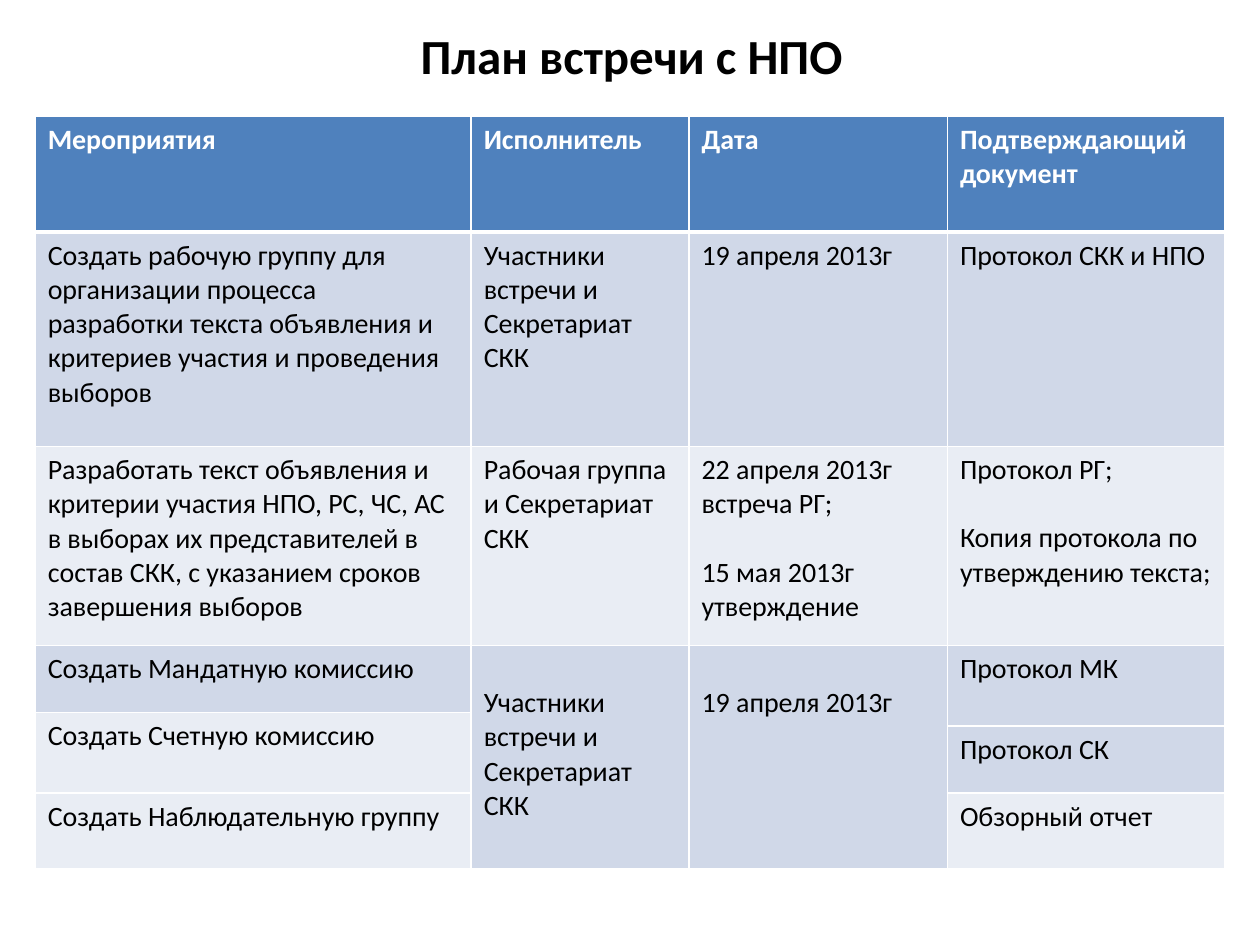
"""Build the meeting plan slide: a title and a table with merged cells."""
from dataclasses import dataclass

from lxml import etree
from pptx import Presentation
from pptx.dml.color import RGBColor
from pptx.enum.text import MSO_ANCHOR, PP_ALIGN
from pptx.oxml.ns import qn
from pptx.util import Cm, Pt

CENTER, LEFT = PP_ALIGN.CENTER, PP_ALIGN.LEFT
MIDDLE = MSO_ANCHOR.MIDDLE
BLANK_LAYOUT = 6
FONT = "Calibri"
COLORS = {"white": "FFFFFF", "black": "000000", "header": "4F81BD",
          "dark": "D0D8E8", "light": "E9EDF4"}
COLUMN_WIDTHS = (8.79, 4.39, 5.21, 5.59)
ROW_HEIGHTS = (2.34, 4.32, 4.01, 1.35, 0.28, 1.35, 1.52)
LINE_GAP = Pt(19.5)
CELL_MARGIN = Cm(0.13)


@dataclass(frozen=True)
class Entry:
    """One filled table cell, which may span several rows."""
    row: int
    column: int
    lines: tuple[str, ...]
    fill: str
    row_span: int = 1
    lowered: bool = False


HEADERS = ("Мероприятия", "Исполнитель", "Дата", "Подтверждающий документ")
FIRST_STEP = (
    "Создать рабочую группу для организации процесса разработки текста "
    "объявления и критериев участия и проведения выборов",
    "Участники встречи и Секретариат СКК", "19 апреля 2013г", "Протокол СКК и НПО")
ENTRIES = (
    *(Entry(0, column, (text,), "header") for column, text in enumerate(HEADERS)),
    *(Entry(1, column, (text,), "dark") for column, text in enumerate(FIRST_STEP)),
    Entry(2, 0, ("Разработать текст объявления и критерии участия НПО, РС, ЧС, АС "
                 "в выборах их представителей в состав СКК, с указанием сроков "
                 "завершения выборов",), "light"),
    Entry(2, 1, ("Рабочая группа и Секретариат СКК",), "light"),
    Entry(2, 2, ("22 апреля 2013г встреча РГ;", "15 мая 2013г утверждение"), "light"),
    Entry(2, 3, ("Протокол РГ;", "Копия протокола по утверждению текста;"), "light"),
    Entry(3, 0, ("Создать Мандатную комиссию",), "dark"),
    Entry(3, 1, ("Участники встречи и Секретариат СКК",), "dark", 4, True),
    Entry(3, 2, ("19 апреля 2013г",), "dark", 4, True),
    Entry(3, 3, ("Протокол МК",), "dark", 2),
    Entry(4, 0, ("Создать Счетную комиссию",), "light", 2),
    Entry(5, 3, ("Протокол СК",), "dark"),
    Entry(6, 0, ("Создать Наблюдательную группу",), "light"),
    Entry(6, 3, ("Обзорный отчет",), "light"),
)


def write(frame, lines: tuple[str, ...], *, size: int, color: str,
          bold: bool = False, align=LEFT) -> None:
    """Write paragraphs, set one line apart, into a text frame."""
    frame.word_wrap = True
    for index, line in enumerate(lines):
        para = frame.add_paragraph() if index else frame.paragraphs[0]
        para.alignment = align
        if index:
            para.space_before = LINE_GAP
        span = para.add_run()
        span.text = line
        span.font.name = FONT
        span.font.size = Pt(size)
        span.font.bold = bold
        span.font.color.rgb = RGBColor.from_string(COLORS[color])


def draw_borders(cell, row: int) -> None:
    """Outline a cell in white, with a thick line under the header."""
    thick_side = {0: "lnB", 1: "lnT"}.get(row)
    properties = cell._tc.get_or_add_tcPr()
    for side in ("lnL", "lnR", "lnT", "lnB"):
        width = Pt(3 if side == thick_side else 1)
        line = etree.SubElement(properties, qn(f"a:{side}"), w=str(width))
        fill = etree.SubElement(line, qn("a:solidFill"))
        etree.SubElement(fill, qn("a:srgbClr"), val=COLORS["white"])


def draw_entry(table, entry: Entry) -> None:
    """Fill, merge and write one entry of the table."""
    cell = table.cell(entry.row, entry.column)
    last_row = entry.row + entry.row_span - 1
    if entry.row_span > 1:
        cell.merge(table.cell(last_row, entry.column))
    for row in range(entry.row, last_row + 1):
        part = table.cell(row, entry.column)
        draw_borders(part, row)
        part.fill.solid()
        part.fill.fore_color.rgb = RGBColor.from_string(COLORS[entry.fill])
    cell.margin_top = CELL_MARGIN + (LINE_GAP if entry.lowered else 0)
    is_header = entry.row == 0
    write(cell.text_frame, entry.lines, size=16, bold=is_header,
          color="white" if is_header else "black")


def draw_title(page) -> None:
    """Add the centred slide title."""
    box = page.shapes.add_textbox(Cm(1.3), Cm(0.33), Cm(22.86), Cm(1.55))
    box.text_frame.vertical_anchor = MIDDLE
    write(box.text_frame, ("План встречи с НПО",), size=28, color="black",
          bold=True, align=CENTER)


def draw_plan(page) -> None:
    """Add the table of activities."""
    table = page.shapes.add_table(
        len(ROW_HEIGHTS), len(COLUMN_WIDTHS), Cm(0.71), Cm(2.34),
        Cm(sum(COLUMN_WIDTHS)), Cm(sum(ROW_HEIGHTS))).table
    for column, width in zip(table.columns, COLUMN_WIDTHS):
        column.width = Cm(width)
    for row, height in zip(table.rows, ROW_HEIGHTS):
        row.height = Cm(height)
    for entry in ENTRIES:
        draw_entry(table, entry)


def main() -> None:
    """Build and save the deck."""
    deck = Presentation()
    deck.slide_width, deck.slide_height = Cm(25.4), Cm(19.05)
    page = deck.slides.add_slide(deck.slide_layouts[BLANK_LAYOUT])
    draw_title(page)
    draw_plan(page)
    deck.save("out.pptx")


if __name__ == "__main__":
    main()
